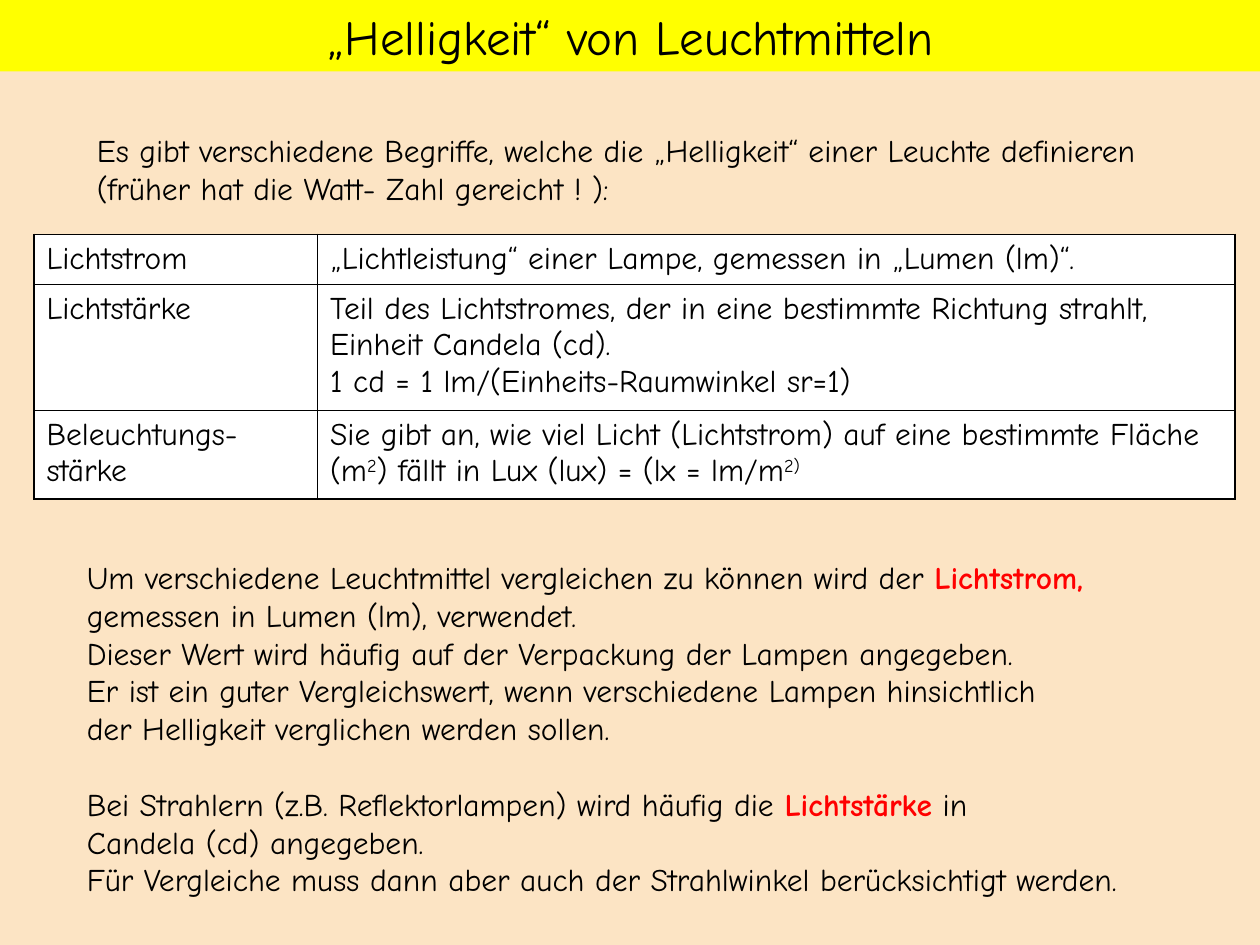
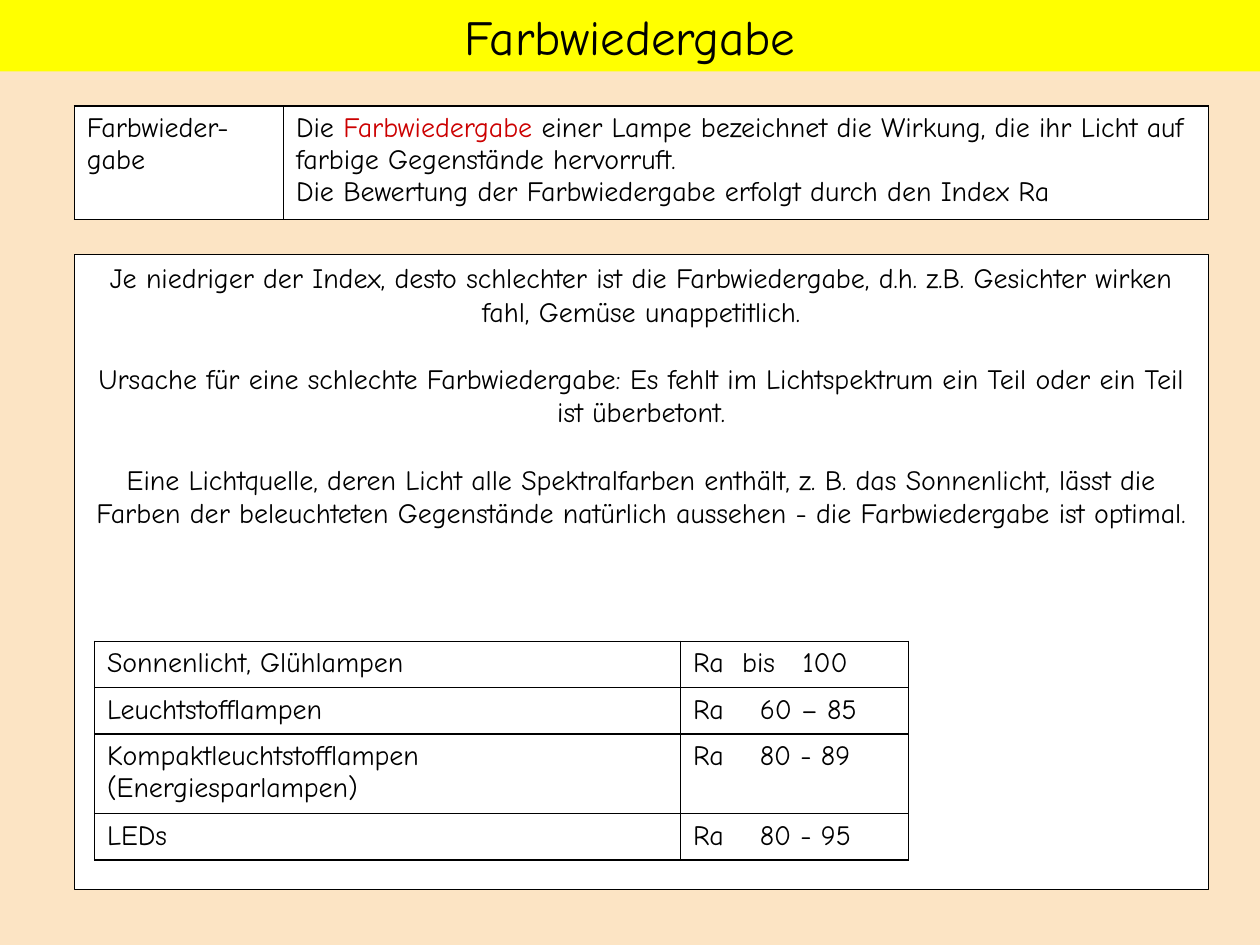
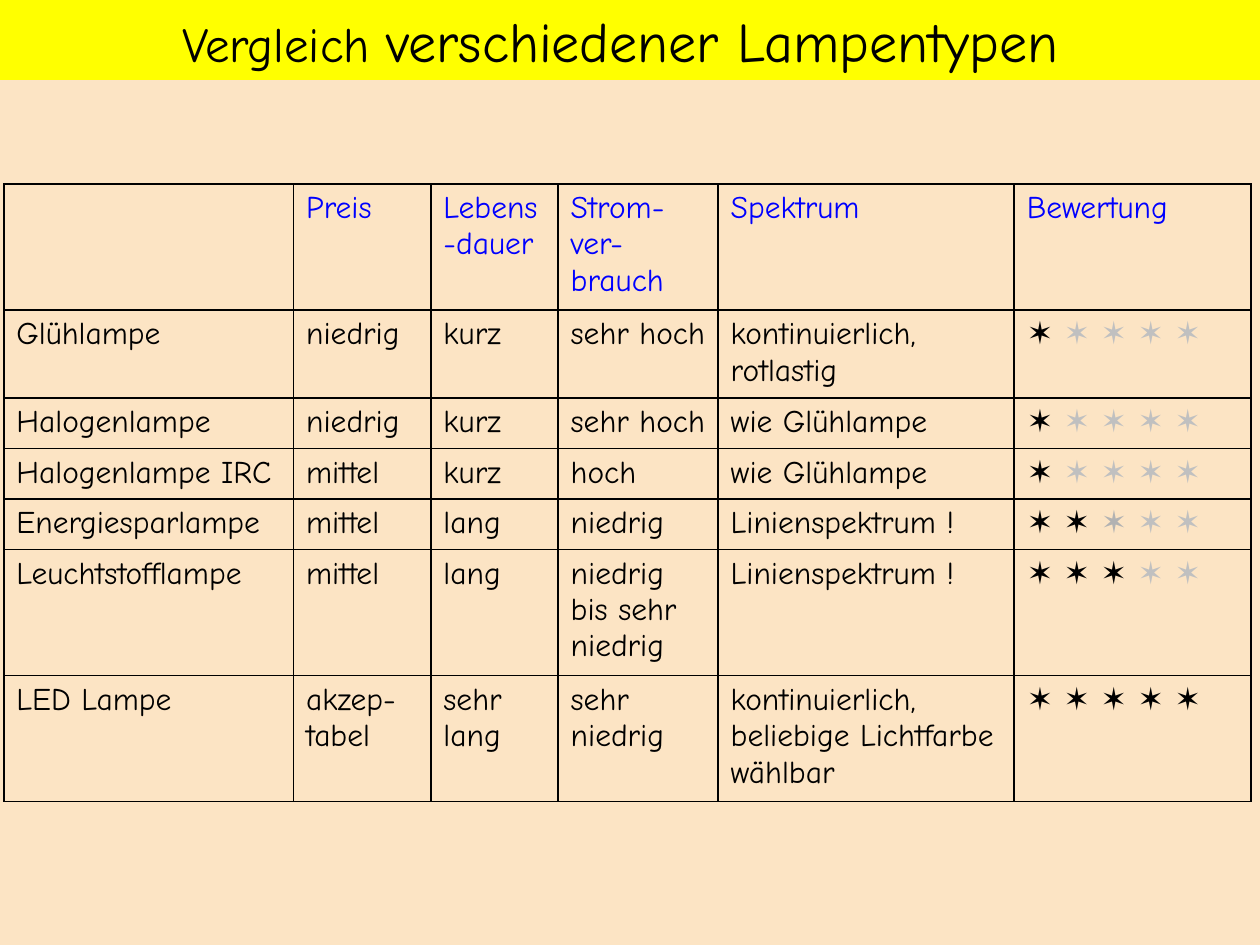
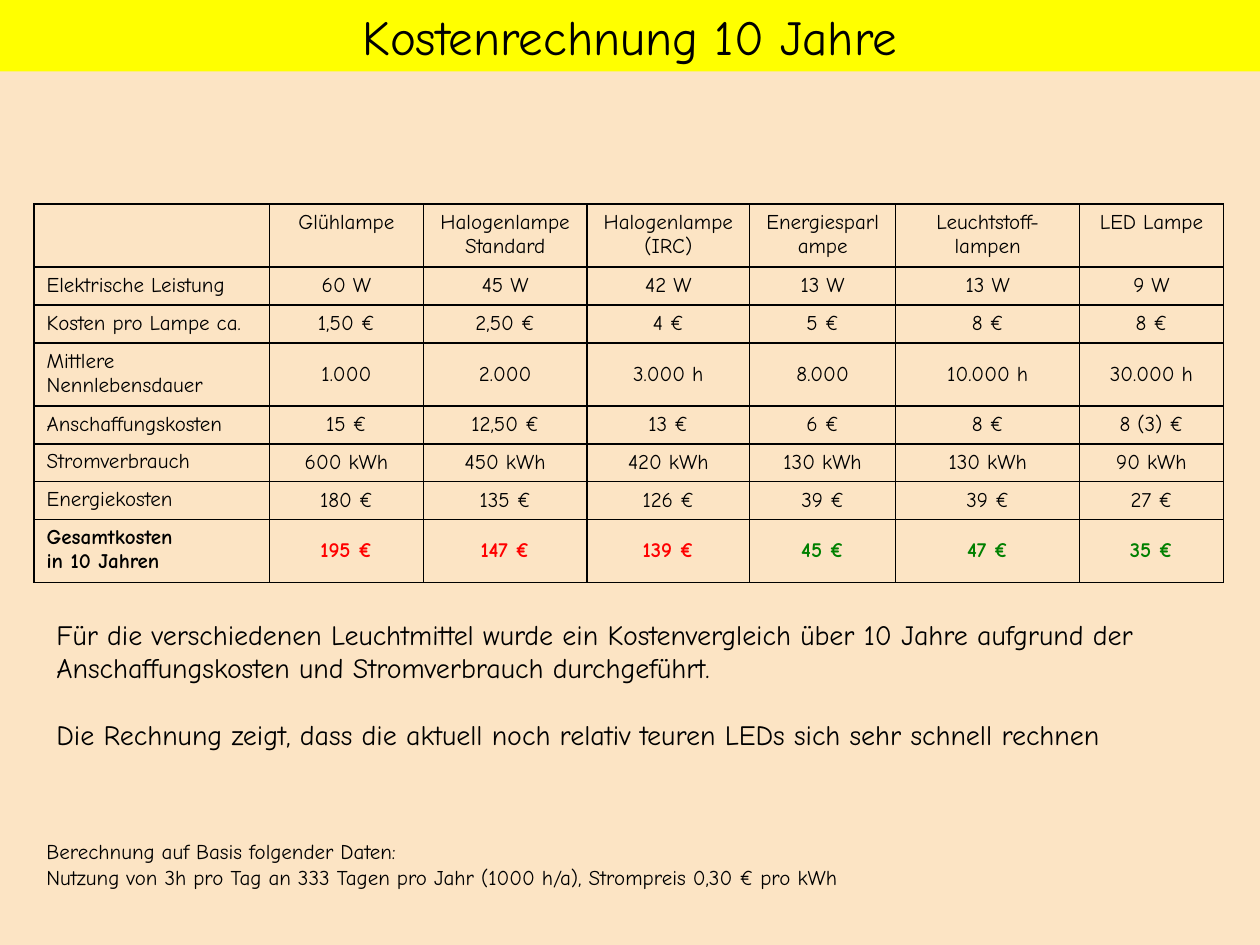
from lxml.etree import SubElement
from pptx import Presentation
from pptx.dml.color import RGBColor
from pptx.enum.shapes import MSO_SHAPE
from pptx.enum.text import MSO_ANCHOR, PP_ALIGN
from pptx.oxml.ns import qn
from pptx.util import Inches, Pt

# Shared look
FONT = "Comic Neue"
BLACK = RGBColor(0x00, 0x00, 0x00)
WHITE = RGBColor(0xFF, 0xFF, 0xFF)
PEACH = RGBColor(0xFC, 0xE4, 0xC4)
YELLOW = RGBColor(0xFF, 0xFF, 0x00)
RED = RGBColor(0xFF, 0x00, 0x00)
DARK_RED = RGBColor(0xCC, 0x00, 0x00)
GREEN = RGBColor(0x00, 0x80, 0x00)
BLUE = RGBColor(0x00, 0x00, 0xFF)
SILVER = RGBColor(0xC0, 0xC0, 0xC0)
GREY = RGBColor(0xB2, 0xB2, 0xB2)
WIDTH, HEIGHT = 10, 7.5
PAD = 0.1                 # top and bottom inset of a text together
LINE = 1.2                # line height as a share of the text size

# Content: a text is a string or a list of paragraphs, a paragraph is a
# string or a list of runs, a run is a string or (string, format);
# "\n" is a line break
KEY = dict(color=RED, bold=True)
SUP = dict(raised=True)

LIGHT_INTRO = ("Es gibt verschiedene Begriffe, welche die „Helligkeit“ einer Leuchte definieren "
               "(früher hat die Watt- Zahl gereicht ! ):")
LIGHT_TERMS = [
    ["Lichtstrom", "„Lichtleistung“ einer Lampe, gemessen in „Lumen (lm)“."],
    ["Lichtstärke", "Teil des Lichtstromes, der in eine bestimmte Richtung strahlt, "
                    "Einheit Candela (cd).\n1 cd = 1 lm/(Einheits-Raumwinkel sr=1)"],
    [["Beleuchtungs-", "stärke"],
     [["Sie gibt an, wie viel Licht (Lichtstrom) auf eine bestimmte Fläche (m", ("2", SUP),
       ") fällt in Lux (lux) = (lx = lm/m", ("2)", SUP)]]],
]
LIGHT_FLUX = [
    ["Um verschiedene Leuchtmittel vergleichen zu können wird der ",
     ("Lichtstrom,\n", KEY), "gemessen in Lumen (lm), verwendet."],
    "Dieser Wert wird häufig auf der Verpackung der Lampen angegeben.\n"
    "Er ist ein guter Vergleichswert, wenn verschiedene Lampen hinsichtlich\n"
    "der Helligkeit verglichen werden sollen.",
    ["Bei Strahlern (z.B. Reflektorlampen) wird häufig die ", ("Lichtstärke", KEY),
     " in\nCandela (cd) angegeben."],
    "Für Vergleiche muss dann aber auch der Strahlwinkel berücksichtigt werden.",
]

COLOUR_TERM = [[
    "Farbwieder-\ngabe",
    [["Die ", ("Farbwiedergabe", dict(color=DARK_RED)),
      " einer Lampe bezeichnet die Wirkung, die ihr Licht auf farbige Gegenstände hervorruft."],
     "Die Bewertung der Farbwiedergabe erfolgt durch den Index Ra"],
]]
COLOUR_BODY = [
    "Je niedriger der Index, desto schlechter ist die Farbwiedergabe, d.h. z.B. Gesichter "
    "wirken fahl, Gemüse unappetitlich.",
    "Ursache für eine schlechte Farbwiedergabe: Es fehlt im Lichtspektrum ein Teil oder "
    "ein Teil ist überbetont.",
    "Eine Lichtquelle, deren Licht alle Spektralfarben enthält, z. B. das Sonnenlicht, lässt "
    "die Farben der beleuchteten Gegenstände natürlich aussehen - die Farbwiedergabe ist optimal.",
]
COLOUR_INDEX = [
    ["Sonnenlicht, Glühlampen", "Ra\tbis\t100"],
    ["Leuchtstofflampen", "Ra\t60 – 85"],
    ["Kompaktleuchtstofflampen (Energiesparlampen)", "Ra\t80 - 89"],
    ["LEDs", "Ra\t80 - 95"],
]

LAMP_HEAD = ["", "Preis", "Lebens-dauer", "Strom-\nver-\nbrauch", "Spektrum", "Bewertung"]
LAMPS = [  # the last value is the number of stars
    ["Glühlampe", "niedrig", "kurz", "sehr hoch", "kontinuierlich, rotlastig", 1],
    ["Halogenlampe", "niedrig", "kurz", "sehr hoch", "wie Glühlampe", 1],
    ["Halogenlampe IRC", "mittel", "kurz", "hoch", "wie Glühlampe", 1],
    ["Energiesparlampe", "mittel", "lang", "niedrig", "Linienspektrum !", 2],
    ["Leuchtstofflampe", "mittel", "lang", "niedrig bis sehr niedrig", "Linienspektrum !", 3],
    ["LED Lampe", "akzep-tabel", "sehr lang", "sehr niedrig",
     "kontinuierlich, beliebige Lichtfarbe wählbar", 5],
]
STARS = 5

COSTS = [
    ["", "Glühlampe", ["Halogenlampe", "Standard"], ["Halogenlampe", "(IRC)"],
     "Energiesparlampe", "Leuchtstoff-lampen", "LED Lampe"],
    ["Elektrische Leistung", "60 W", "45 W", "42 W", "13 W", "13 W", "9 W"],
    ["Kosten pro Lampe ca.", "1,50 €", "2,50 €", "4 €", "5 €", "8 €", "8 €"],
    ["Mittlere Nennlebensdauer", "1.000", "2.000", "3.000 h", "8.000", "10.000 h", "30.000 h"],
    ["Anschaffungskosten", "15 €", "12,50 €", "13 €", "6 €", "8 €", "8 (3) €"],
    ["Stromverbrauch", "600 kWh", "450 kWh", "420 kWh", "130 kWh", "130 kWh", "90 kWh"],
    ["Energiekosten", "180 €", "135 €", "126 €", "39 €", "39 €", "27 €"],
    [["Gesamtkosten", "in 10 Jahren"], "195 €", "147 €", "139 €", "45 €", "47 €", "35 €"],
]
COST_NOTE = [
    "Für die verschiedenen Leuchtmittel wurde ein Kostenvergleich über 10 Jahre aufgrund der "
    "Anschaffungskosten und Stromverbrauch durchgeführt.",
    "Die Rechnung zeigt, dass die aktuell noch relativ teuren LEDs sich sehr schnell rechnen",
]
COST_BASIS = [
    "Berechnung auf Basis folgender Daten:",
    "Nutzung von 3h pro Tag an 333 Tagen pro Jahr (1000 h/a), Strompreis 0,30 € pro kWh",
]


def as_list(x):
    return x if isinstance(x, list) else [x]


def write(tf, text, size=18, color=BLACK, bold=False, align=PP_ALIGN.LEFT, gaps=(), tabs=()):
    """Fill a text frame; gaps lists the paragraphs that follow a free line."""
    for i, para in enumerate(as_list(text)):
        p = tf.paragraphs[0] if i == 0 else tf.add_paragraph()
        p.alignment = align
        if i in gaps:
            p.space_before = Pt(size * LINE)
        if tabs:
            stops = SubElement(p._p.get_or_add_pPr(), qn("a:tabLst"))
            for pos in tabs:
                SubElement(stops, qn("a:tab"), pos=str(Inches(pos)), algn="l")
        for run in as_list(para):
            part, fmt = run if isinstance(run, tuple) else (run, {})
            for j, line in enumerate(part.split("\n")):
                if j:
                    p.add_line_break()
                if not line:
                    continue
                r = p.add_run()
                r.text = line
                r.font.name = FONT
                r.font.size = Pt(fmt.get("size", size))
                r.font.bold = fmt.get("bold", bold)
                r.font.color.rgb = fmt.get("color", color)
                if fmt.get("raised"):
                    r.font._element.set("baseline", "30000")


def add_text(slide, x, y, w, h, text, wrap=True, **fmt):
    tf = slide.shapes.add_textbox(Inches(x), Inches(y), Inches(w), Inches(h)).text_frame
    tf.word_wrap = wrap
    write(tf, text, **fmt)


def add_box(slide, x, y, w, h, text, fill, line=None, anchor=MSO_ANCHOR.TOP, **fmt):
    sp = slide.shapes.add_shape(MSO_SHAPE.RECTANGLE, Inches(x), Inches(y), Inches(w), Inches(h))
    sp.shadow.inherit = False
    sp.fill.solid()
    sp.fill.fore_color.rgb = fill
    if line is None:
        sp.line.fill.background()
    else:
        sp.line.color.rgb = line
        sp.line.width = Pt(0.75)
    sp.text_frame.word_wrap = True
    sp.text_frame.vertical_anchor = anchor
    write(sp.text_frame, text, align=PP_ALIGN.CENTER, **fmt)


def add_title(slide, text, tallest=28):
    """Band across the top, as high as one line of its largest text."""
    add_box(slide, 0, 0, WIDTH, tallest * LINE / 72 + PAD, text, YELLOW, size=28)


def add_border(cell):
    tcPr = cell._tc.get_or_add_tcPr()
    for side in ("lnL", "lnR", "lnT", "lnB"):
        ln = SubElement(tcPr, qn("a:" + side), w=str(Pt(1)))
        SubElement(SubElement(ln, qn("a:solidFill")), qn("a:srgbClr"), val=str(BLACK))


def add_grid(slide, x, y, cols, lines, rows, size=18, fill=None, style=lambda i, j: {}):
    """Table whose row heights follow from the text lines in each row."""
    heights = [n * size / 60 + PAD for n in lines]
    tbl = slide.shapes.add_table(len(rows), len(cols), Inches(x), Inches(y),
                                 Inches(sum(cols)), Inches(sum(heights))).table
    tbl.first_row = tbl.horz_banding = False
    for col, w in zip(tbl.columns, cols):
        col.width = Inches(w)
    for i, row in enumerate(rows):
        tbl.rows[i].height = Inches(heights[i])
        for j, text in enumerate(row):
            cell = tbl.cell(i, j)
            add_border(cell)
            if fill is None:
                cell.fill.background()
            else:
                cell.fill.solid()
                cell.fill.fore_color.rgb = fill
            fmt = style(i, j)
            cell.vertical_anchor = fmt.pop("anchor", MSO_ANCHOR.TOP)
            write(cell.text_frame, text, size=size, **fmt)


def rating(n):
    """Full stars in black, the missing ones in grey."""
    if n == STARS:
        return " ".join("✶" * n)
    runs = ["✶ " * n]
    rest = STARS - n
    if n == 2:
        runs.append(("✶ ", dict(color=GREY)))
        rest -= 1
    return [runs + [(" ".join("✶" * rest), dict(color=SILVER))]]


def index_style(i, j):
    return dict(tabs=(0.39, 0.87) if i == 0 else (0.53,)) if j else {}


def lamp_style(i, j):
    return dict(color=BLUE) if i == 0 else {}


def cost_style(i, j):
    fmt = dict(bold=i == len(COSTS) - 1)
    if j:
        fmt["align"] = PP_ALIGN.CENTER
        if i:
            fmt["anchor"] = MSO_ANCHOR.MIDDLE
        if fmt["bold"]:
            fmt["color"] = RED if j <= 3 else GREEN
    return fmt


def brightness(slide):
    add_grid(slide, 0.27, 1.86, [2.25, 7.28], [1, 3, 2], LIGHT_TERMS, fill=WHITE)
    add_text(slide, 0.67, 0.99, 8.98, 0.7, LIGHT_INTRO)
    add_text(slide, 0.59, 4.38, 9.15, 2.8, LIGHT_FLUX, wrap=False, gaps=[2])
    add_title(slide, "„Helligkeit“ von Leuchtmitteln")


def colour_rendering(slide):
    add_box(slide, 0.59, 2.02, 9, 5.04, COLOUR_BODY, WHITE, line=BLACK, size=16, gaps=[1, 2])
    add_grid(slide, 0.59, 0.84, [1.66, 7.34], [3], COLOUR_TERM, size=16, fill=WHITE)
    add_grid(slide, 0.75, 5.09, [4.65, 1.81], [1, 1, 2, 1], COLOUR_INDEX,
             size=16, fill=WHITE, style=index_style)
    add_title(slide, "Farbwiedergabe")


def lamp_types(slide):
    rows = [LAMP_HEAD] + [lamp[:-1] + [rating(lamp[-1])] for lamp in LAMPS]
    add_grid(slide, 0.03, 1.46, [2.3, 1.09, 1.01, 1.27, 2.35, 1.88],
             [3, 2, 1, 1, 1, 3, 3], rows, style=lamp_style)
    add_title(slide, [["Vergleich ", ("verschiedener Lampentypen ", dict(size=32))]], tallest=32)


def ten_year_costs(slide):
    add_text(slide, 0.27, 6.61, 7.04, 0.5, COST_BASIS, wrap=False, size=12)
    add_text(slide, 0.35, 4.85, 8.9, 1.44, COST_NOTE, size=16, gaps=[1])
    add_grid(slide, 0.27, 1.62, [1.87, 1.22, 1.3, 1.29, 1.16, 1.46, 1.14],
             [2, 1, 1, 2, 1, 1, 1, 2], COSTS, size=12, style=cost_style)
    add_title(slide, "Kostenrechnung 10 Jahre")


def main():
    prs = Presentation()
    prs.slide_width, prs.slide_height = Inches(WIDTH), Inches(HEIGHT)
    for build in (brightness, colour_rendering, lamp_types, ten_year_costs):
        slide = prs.slides.add_slide(prs.slide_layouts[6])
        slide.background.fill.solid()
        slide.background.fill.fore_color.rgb = PEACH
        build(slide)
    prs.save("out.pptx")


if __name__ == "__main__":
    main()
